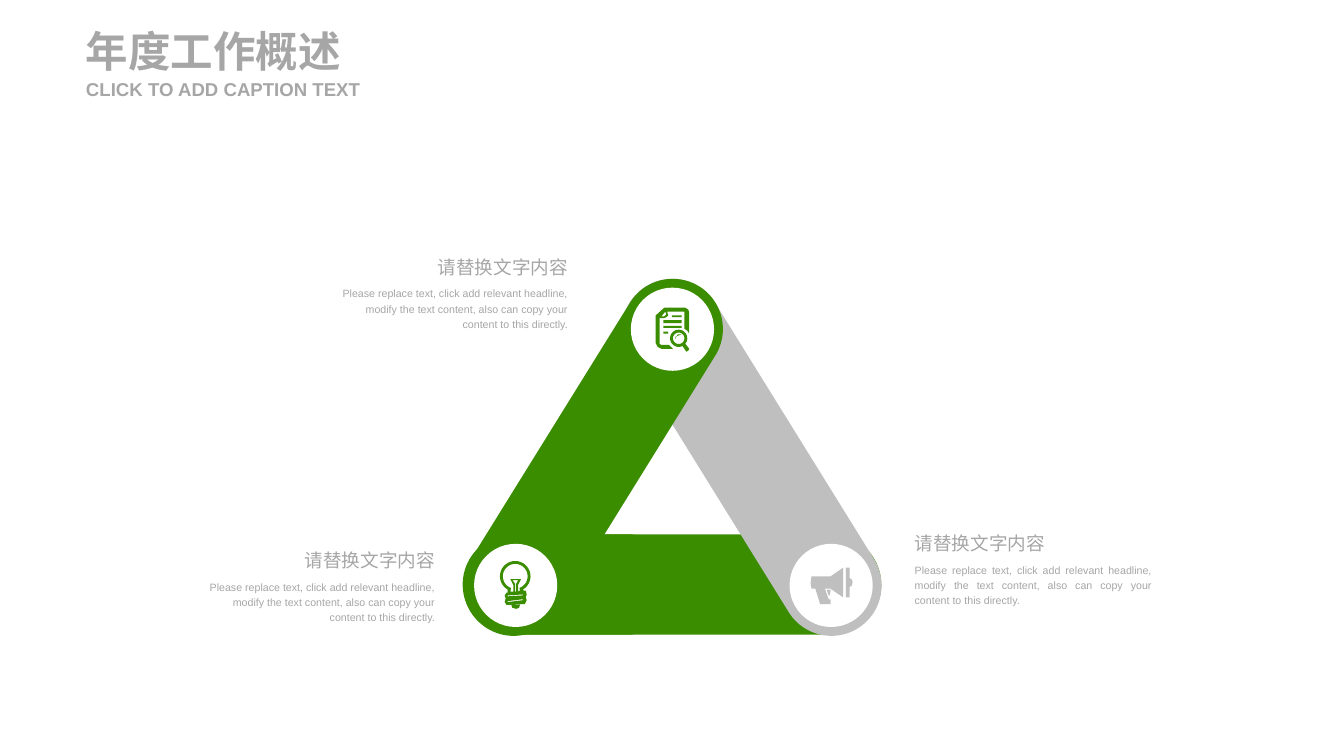
"""Build the annual work overview slide with its triangle of three linked topics."""
from dataclasses import dataclass
from math import cos, radians, sin

from pptx import Presentation
from pptx.dml.color import RGBColor
from pptx.enum.shapes import MSO_SHAPE
from pptx.enum.text import MSO_ANCHOR, MSO_AUTO_SIZE, PP_ALIGN
from pptx.util import Inches, Pt

ROUNDED, OVAL = MSO_SHAPE.ROUNDED_RECTANGLE, MSO_SHAPE.OVAL
LEFT, RIGHT, JUSTIFY = PP_ALIGN.LEFT, PP_ALIGN.RIGHT, PP_ALIGN.JUSTIFY
TOP, MIDDLE = MSO_ANCHOR.TOP, MSO_ANCHOR.MIDDLE
FIT = MSO_AUTO_SIZE.SHAPE_TO_FIT_TEXT

GREEN, SILVER, WHITE, GREY = "3B8D00", "BFBFBF", "FFFFFF", "A6A6A6"
BAR_HEIGHT, DISC_SIZE = 1.05, 0.87
HEADLINE = "请替换文字内容"
BODY = (
    "Please replace text, click add relevant headline, modify the text content, "
    "also can copy your content to this directly."
)

Point = tuple[float, float]
Contour = list[Point]


@dataclass
class Bar:
    left: float
    top: float
    width: float
    color: str
    rotation: float = 0


@dataclass
class Topic:
    disc: Point
    color: str
    icon: list[Contour]
    right_edge: float
    top: float
    headline_width: float
    body_width: float
    align: PP_ALIGN = RIGHT


def arc(x: float, y: float, radius: float, start: int = 0, end: int = 360) -> Contour:
    """Return points along a circular arc, with angles in degrees."""
    return [
        (x + radius * cos(radians(angle)), y + radius * sin(radians(angle)))
        for angle in range(start, end + 1, 10)
    ]


def rectangle(left: float, top: float, right: float, bottom: float) -> Contour:
    """Return the corners of a rectangle."""
    return [(left, top), (right, top), (right, bottom), (left, bottom)]


DOCUMENT = [
    [(6.95, 3.22), (7.17, 3.22), (7.2, 3.24), (7.21, 3.27), (7.21, 3.49), (7.19, 3.46),
     (7.16, 3.44), (7.16, 3.26), (6.98, 3.26), (6.99, 3.3), (6.97, 3.32), (6.94, 3.33),
     (6.9, 3.33), (6.9, 3.6), (6.92, 3.61), (7, 3.61), (7.04, 3.65), (6.92, 3.65),
     (6.88, 3.63), (6.86, 3.59), (6.86, 3.3)],
    [(6.96, 3.26), (6.92, 3.31), (6.95, 3.31), (6.97, 3.29)],
    rectangle(7.03, 3.3, 7.13, 3.32),
    rectangle(6.94, 3.35, 7.13, 3.38),
    rectangle(6.94, 3.41, 7.13, 3.43),
    rectangle(6.94, 3.47, 6.99, 3.49),
    arc(7.1, 3.54, 0.09),
    arc(7.1, 3.54, 0.06),
    [(7.06, 3.55), (7.07, 3.52), (7.13, 3.5), (7.09, 3.5)],
    [(7.14, 3.62), (7.17, 3.6), (7.18, 3.61), (7.21, 3.65), (7.2, 3.67), (7.18, 3.68)],
]
BULB = [
    arc(5.39, 6.03, 0.16, 120, 420)
    + [(5.48, 6.18), (5.5, 6.18), (5.51, 6.22), (5.5, 6.25), (5.51, 6.28), (5.49, 6.32),
       (5.3, 6.33), (5.28, 6.3), (5.29, 6.26), (5.28, 6.23), (5.3, 6.2), (5.31, 6.2)],
    arc(5.39, 6.03, 0.13, 110, 430)
    + [(5.44, 6.18), (5.42, 6.19), (5.42, 6.12), (5.45, 6.06), (5.34, 6.06),
       (5.37, 6.12), (5.37, 6.19), (5.34, 6.19)],
    [(5.42, 6.07), (5.36, 6.07), (5.39, 6.11), (5.39, 6.19), (5.4, 6.19), (5.4, 6.11)],
    [(5.35, 6.33), (5.44, 6.33), (5.43, 6.36), (5.4, 6.37), (5.36, 6.36)],
    [(5.31, 6.29), (5.47, 6.27), (5.47, 6.28), (5.31, 6.3)],
    [(5.31, 6.23), (5.47, 6.22), (5.47, 6.23), (5.31, 6.24)],
]
MEGAPHONE = [
    [(8.49, 6.03), (8.69, 6.03), (8.82, 5.94), (8.82, 6.25), (8.69, 6.16), (8.63, 6.16),
     (8.67, 6.27), (8.69, 6.27), (8.69, 6.32), (8.58, 6.32), (8.53, 6.16), (8.49, 6.16),
     (8.48, 6.1)],
    [(8.85, 5.94), (8.89, 5.94), (8.89, 6.05), (8.91, 6.06), (8.92, 6.09), (8.91, 6.13),
     (8.89, 6.14), (8.89, 6.25), (8.85, 6.25)],
    [(8.69, 6.17), (8.65, 6.17), (8.67, 6.23), (8.68, 6.23)],
]
BARS = [
    Bar(4.86, 5.59, 4.36, GREEN),
    Bar(5.76, 4.26, 4.21, SILVER, 58.2),
    Bar(4.1, 4.26, 4.21, GREEN, -58.2),
    Bar(4.84, 5.59, 2.25, GREEN),
]
TOPICS = [
    Topic((6.6, 3.01), GREEN, DOCUMENT, 6.04, 2.58, 1.62, 2.59),
    Topic((4.96, 5.69), GREEN, BULB, 4.65, 5.65, 1.79, 2.59),
    Topic((8.26, 5.69), SILVER, MEGAPHONE, 12.15, 5.47, 2.68, 2.68, JUSTIFY),
]


def paint(shape, color: str) -> None:
    """Give a shape a plain fill without line or shadow."""
    shape.fill.solid()
    shape.fill.fore_color.rgb = RGBColor.from_string(color)
    shape.line.fill.background()
    shape.shadow.inherit = False


def add_bar(page, bar: Bar) -> None:
    """Draw one round-ended side of the triangle."""
    shape = page.shapes.add_shape(
        ROUNDED, Inches(bar.left), Inches(bar.top), Inches(bar.width), Inches(BAR_HEIGHT)
    )
    shape.adjustments[0] = 0.5
    shape.rotation = bar.rotation
    paint(shape, bar.color)


def add_icon(page, contours: list[Contour], color: str) -> None:
    """Draw all contours of an icon as one outline."""
    builder = None
    for contour in contours:
        points = [(Inches(x), Inches(y)) for x, y in contour]
        if builder is None:
            builder = page.shapes.build_freeform(*points[0])
        else:
            builder.move_to(*points[0])
        builder.add_line_segments(points[1:], close=True)
    paint(builder.convert_to_shape(), color)


def add_text(page, text: str, *, left: float, top: float, width: float, height: float,
             size: int, align: PP_ALIGN = LEFT, bold: bool = False,
             spacing: float = 1.2, inset: bool = True) -> None:
    """Add a wrapped text box with one paragraph."""
    box = page.shapes.add_textbox(Inches(left), Inches(top), Inches(width), Inches(height))
    frame = box.text_frame
    frame.word_wrap = True
    frame.auto_size = FIT
    frame.vertical_anchor = TOP if inset else MIDDLE
    if not inset:
        frame.margin_left = frame.margin_right = frame.margin_top = frame.margin_bottom = 0
    para = frame.paragraphs[0]
    para.alignment = align
    para.line_spacing = spacing
    span = para.add_run()
    span.text = text
    span.font.name = "Arial"
    span.font.size = Pt(size)
    span.font.bold = bold
    span.font.color.rgb = RGBColor.from_string(GREY)


def add_topic(page, topic: Topic) -> None:
    """Draw a topic's disc, icon, headline and body."""
    x, y = topic.disc
    disc = page.shapes.add_shape(
        OVAL, Inches(x), Inches(y), Inches(DISC_SIZE), Inches(DISC_SIZE)
    )
    paint(disc, WHITE)
    add_icon(page, topic.icon, topic.color)
    headline_align = RIGHT if topic.align == RIGHT else LEFT
    add_text(page, HEADLINE, left=topic.right_edge - topic.headline_width, top=topic.top,
             width=topic.headline_width, height=0.36, size=14, align=headline_align)
    add_text(page, BODY, left=topic.right_edge - topic.body_width, top=topic.top + 0.35,
             width=topic.body_width, height=0.57, size=8, align=topic.align)


def main() -> None:
    """Build and save the deck."""
    deck = Presentation()
    deck.slide_width, deck.slide_height = Inches(14.06), Inches(7.91)
    page = deck.slides.add_slide(deck.slide_layouts[6])
    for bar in BARS:
        add_bar(page, bar)
    for topic in TOPICS:
        add_topic(page, topic)
    add_text(page, "年度工作概述", left=0.9, top=0.26, width=3.07, height=0.54,
             size=32, bold=True, spacing=1.0, inset=False)
    add_text(page, "CLICK TO ADD CAPTION TEXT", left=0.9, top=0.81, width=3.07, height=0.24,
             size=14, bold=True, spacing=1.0, inset=False)
    deck.save("out.pptx")


if __name__ == "__main__":
    main()
